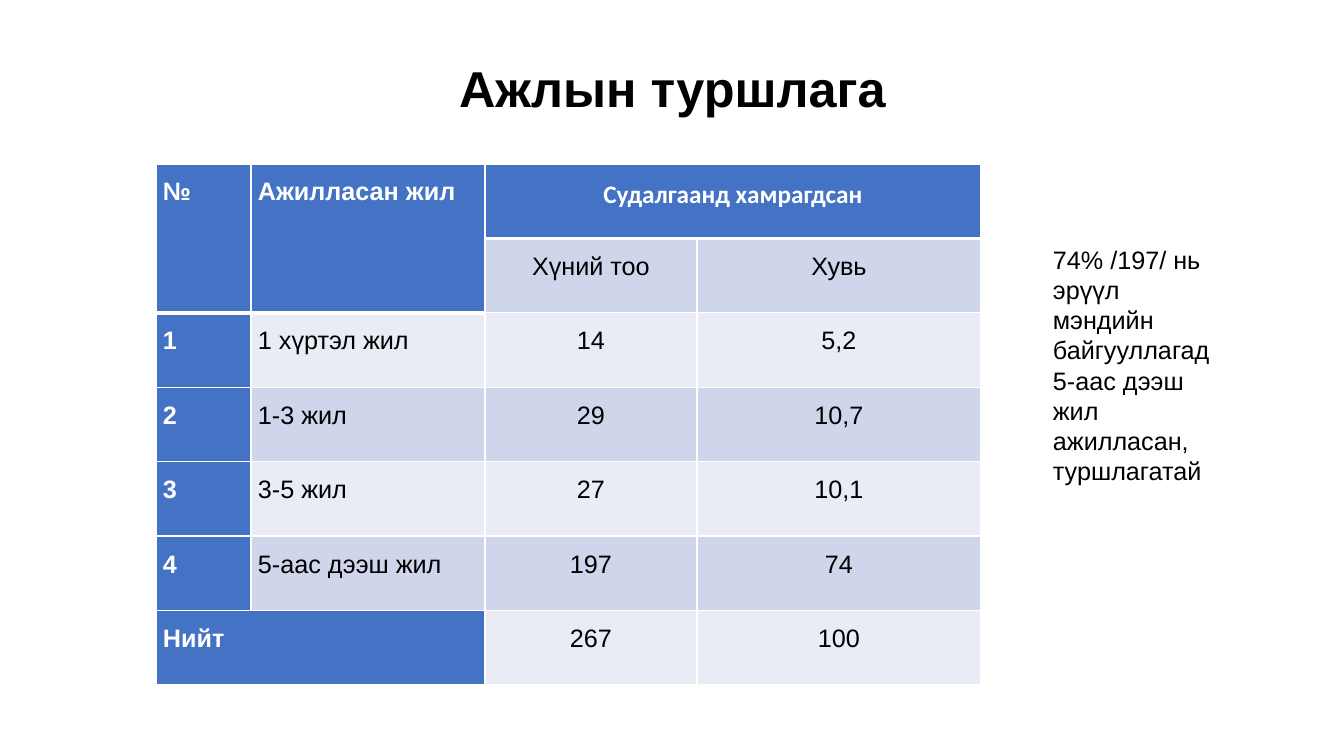
import pptx
import pptx.dml.color
import pptx.enum.text
import pptx.oxml.ns
import pptx.util
from lxml import etree

EMU_PER_PX = 914400 / 100.8

BLACK = pptx.dml.color.RGBColor(0x00, 0x00, 0x00)
WHITE = pptx.dml.color.RGBColor(0xFF, 0xFF, 0xFF)
BLUE = pptx.dml.color.RGBColor(0x44, 0x72, 0xC4)
BAND_DARK = pptx.dml.color.RGBColor(0xCF, 0xD5, 0xEA)
BAND_LIGHT = pptx.dml.color.RGBColor(0xE9, 0xEB, 0xF5)

LEFT = pptx.enum.text.PP_ALIGN.LEFT
CENTER = pptx.enum.text.PP_ALIGN.CENTER
MIDDLE = pptx.enum.text.MSO_ANCHOR.MIDDLE
TOP = pptx.enum.text.MSO_ANCHOR.TOP

TITLE = "Ажлын туршлага"
NOTE = ("74% /197/ нь эрүүл мэндийн байгууллагад 5-аас дээш жил "
        "ажилласан, туршлагатай")
ROWS = [
    ["№", "Ажилласан жил", "Судалгаанд хамрагдсан", ""],
    ["", "", "Хүний тоо", "Хувь"],
    ["1", "1 хүртэл жил", "14", "5,2"],
    ["2", "1-3 жил", "29", "10,7"],
    ["3", "3-5 жил", "27", "10,1"],
    ["4", "5-аас дээш жил", "197", "74"],
    ["Нийт", "", "267", "100"],
]
COLUMN_WIDTHS = [95, 234, 212, 284]
TABLE_HEIGHT = 521
# First and last cell of each merged area, as (row, column)
MERGES = [((0, 0), (1, 0)), ((0, 1), (1, 1)), ((0, 2), (0, 3)), ((6, 0), (6, 1))]
# Last header row of each column, which carries the thick line
HEADER_ENDS = [1, 1, 0, 0]


def px(length):
    return pptx.util.Emu(round(length * EMU_PER_PX))


def set_values(target, values):
    for name, value in values.items():
        setattr(target, name, value)


def write_text(frame, text, size, bold=False, color=BLACK, font="Arial",
               align=LEFT, spacing=1.0):
    para = frame.paragraphs[0]
    set_values(para, {"alignment": align, "line_spacing": spacing})
    span = para.add_run()
    span.text = text
    set_values(span.font, {"name": font, "size": pptx.util.Pt(size), "bold": bold})
    span.font.color.rgb = color


def add_text(page, place, text, size, anchor=TOP, **style):
    box = page.shapes.add_textbox(*[px(length) for length in place])
    set_values(box.text_frame, {"word_wrap": True, "vertical_anchor": anchor})
    write_text(box.text_frame, text, size, **style)


def add_border(cell, side, points):
    properties = cell._tc.get_or_add_tcPr()
    line = etree.SubElement(properties, pptx.oxml.ns.qn(f"a:ln{side}"),
                            w=str(pptx.util.Pt(points)))
    fill = etree.SubElement(line, pptx.oxml.ns.qn("a:solidFill"))
    etree.SubElement(fill, pptx.oxml.ns.qn("a:srgbClr"), val=str(WHITE))


def format_cell(cell, text, row, column):
    header_end = HEADER_ENDS[column]
    is_header = row <= header_end
    is_blue = is_header or column == 0 or (row == len(ROWS) - 1 and column == 1)
    set_values(cell, {"margin_left": px(7), "margin_right": px(7),
                      "margin_top": 0, "margin_bottom": 0})

    # White grid, thicker under the header
    add_border(cell, "L", 1)
    add_border(cell, "R", 1)
    add_border(cell, "T", 3 if row == header_end + 1 else 1)
    add_border(cell, "B", 3 if row == header_end else 1)

    cell.fill.solid()
    band = BAND_DARK if row % 2 else BAND_LIGHT
    cell.fill.fore_color.rgb = BLUE if is_blue else band
    if text:
        write_text(cell.text_frame, text, 18, bold=is_blue,
                   color=WHITE if is_blue else BLACK,
                   font="Calibri" if is_header and column == 2 else "Arial",
                   align=CENTER if column >= 2 else LEFT, spacing=1.5)


def add_experience_table(page, left, top):
    table = page.shapes.add_table(
        len(ROWS), len(COLUMN_WIDTHS), px(left), px(top),
        px(sum(COLUMN_WIDTHS)), px(TABLE_HEIGHT)).table
    for column, width in zip(table.columns, COLUMN_WIDTHS):
        column.width = px(width)
    for row in table.rows:
        row.height = px(TABLE_HEIGHT / len(ROWS))
    for row, texts in enumerate(ROWS):
        for column, text in enumerate(texts):
            format_cell(table.cell(row, column), text, row, column)
    for first, last in MERGES:
        table.cell(*first).merge(table.cell(*last))


def main():
    deck = pptx.Presentation()
    set_values(deck, {"slide_width": px(1344), "slide_height": px(756)})
    page = deck.slides.add_slide(deck.slide_layouts[6])

    # Title
    add_text(page, (93, 40, 1159, 103), TITLE, 36, anchor=MIDDLE,
             bold=True, align=CENTER, spacing=0.9)
    # Years worked, by number of people and percentage
    add_experience_table(page, 156, 164)
    # Conclusion beside the table
    add_text(page, (1043, 239, 188, 254), NOTE, 18)

    deck.save("out.pptx")


if __name__ == "__main__":
    main()
